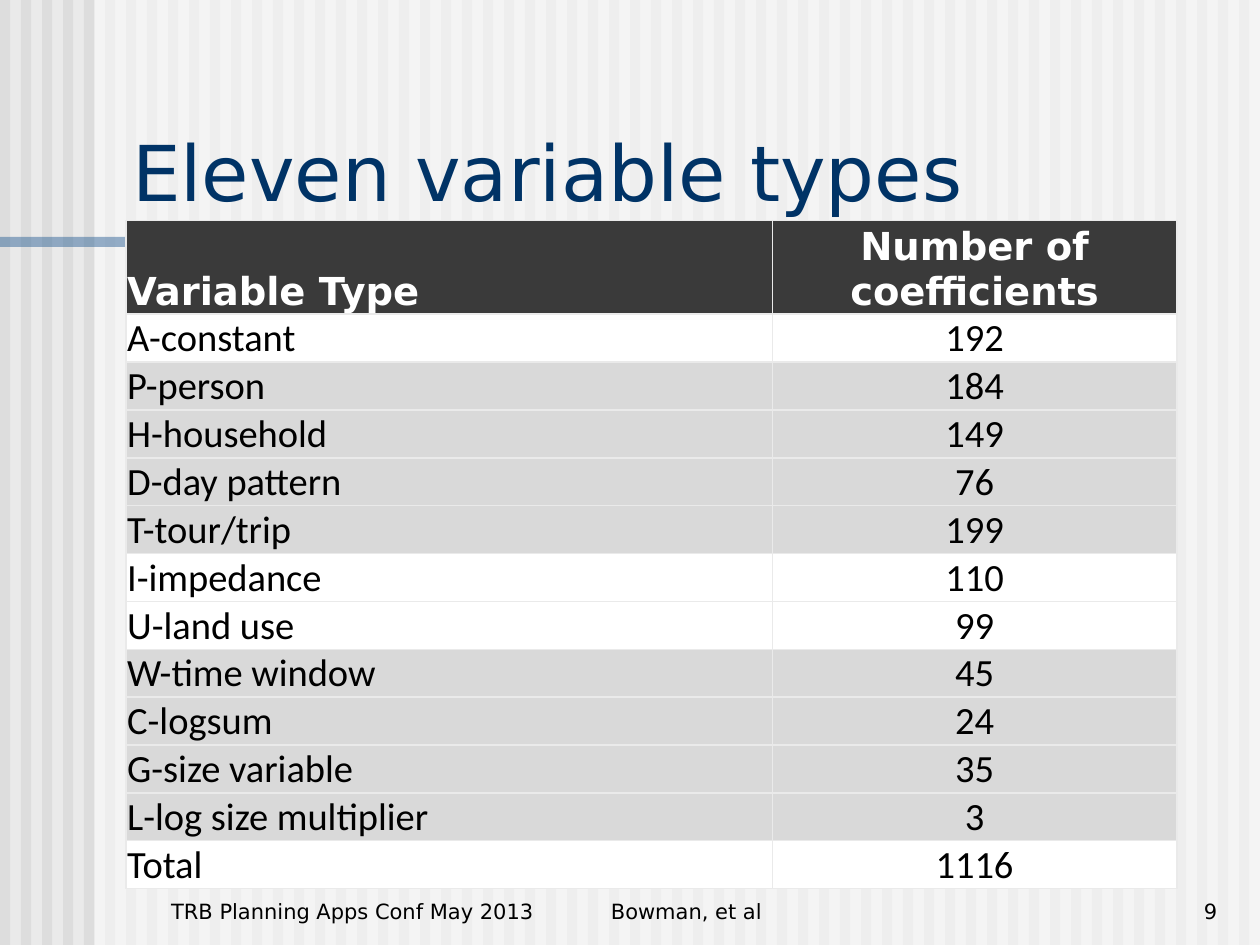
from lxml.etree import SubElement as Sub
from pptx import Presentation
from pptx.dml.color import RGBColor
from pptx.enum.shapes import MSO_SHAPE as Shape
from pptx.enum.text import MSO_ANCHOR as Anchor, PP_ALIGN as Align
from pptx.oxml.ns import qn
from pptx.util import Inches, Pt

SANS = "DejaVu Sans"
ROWS = [
    ("A-constant", 192, "FFFFFF"),
    ("P-person", 184, "D9D9D9"),
    ("H-household", 149, "D9D9D9"),
    ("D-day pattern", 76, "D9D9D9"),
    ("T-tour/trip", 199, "D9D9D9"),
    ("I-impedance", 110, "FFFFFF"),
    ("U-land use", 99, "FFFFFF"),
    ("W-time window", 45, "D9D9D9"),
    ("C-logsum", 24, "D9D9D9"),
    ("G-size variable", 35, "D9D9D9"),
    ("L-log size multiplier", 3, "D9D9D9"),
    ("Total", 1116, "FFFFFF"),
]


def paint(fill, color):
    fill.solid()
    fill.fore_color.rgb = RGBColor.from_string(color)


def style(para, size, color, face=SANS, bold=False, align=Align.LEFT):
    para.alignment = align
    font = para.font
    font.size, font.name, font.bold = Pt(size), face, bold
    paint(font.fill, color)


def add_bar(slide, box, color, alpha=None):
    bar = slide.shapes.add_shape(Shape.RECTANGLE, *map(Inches, box))
    bar.shadow.inherit = False
    bar.line.fill.background()
    paint(bar.fill, color)
    if alpha:
        tint = bar.fill._xPr.find(qn("a:solidFill"))[0]
        Sub(tint, qn("a:alpha"), val=str(alpha * 1000))


def add_text(slide, box, text, size, color, align=Align.LEFT):
    frame = slide.shapes.add_textbox(*map(Inches, box)).text_frame
    frame.word_wrap = True
    frame.vertical_anchor = Anchor.BOTTOM
    frame.text = text
    style(frame.paragraphs[0], size, color, align=align)


def add_back(slide, box):
    left, top, width, height = box
    paint(slide.background.fill, "EAEAEA")
    for i in range(60):
        add_bar(slide, (left + i / 6, top, 0.08, height), "DDDDDD")
    add_bar(slide, (left + 0.75, top, width - 0.75, height), "FFFFFF", 50)
    add_bar(slide, (left, top + 1.88, 7.6, 0.08), "336699", 50)


def add_edges(cell, color):
    props = cell._tc.get_or_add_tcPr()
    for i, side in enumerate(("lnL", "lnR", "lnT", "lnB")):
        line = props.makeelement(qn(f"a:{side}"), w=str(Pt(1)))
        props.insert(i, line)
        Sub(Sub(line, qn("a:solidFill")), qn("a:srgbClr"), val=color)


def set_cell(cell, text, fill, color, face, bold, align):
    cell.text = str(text)
    cell.vertical_anchor = Anchor.BOTTOM
    cell.margin_left = cell.margin_right = cell.margin_top = Inches(0.01)
    cell.margin_bottom = 0
    style(cell.text_frame.paragraphs[0], 22, color, face, bold, align)
    paint(cell.fill, fill)
    add_edges(cell, "EAEAEA")


def add_grid(slide, box):
    data = [("Variable Type", "Number of coefficients", "3A3A3A")] + ROWS
    grid = slide.shapes.add_table(len(data), 2, *map(Inches, box)).table
    for col, width in zip(grid.columns, (5.13, 3.21)):
        col.width = Inches(width)
    for i, (*texts, fill) in enumerate(data):
        grid.rows[i].height = Inches(0.38 if i else 0.74)
        look = ("000000", "Calibri", False) if i else ("FFFFFF", SANS, True)
        for j, align in enumerate((Align.LEFT, Align.CENTER)):
            set_cell(grid.cell(i, j), texts[j], fill, *look, align)


def add_foot(slide, box):
    left, top, _, height = box
    parts = [
        ("TRB Planning Apps Conf May 2013", 3.49, Align.LEFT),
        ("Bowman, et al", 4.08, Align.LEFT),
        ("9", 0.93, Align.RIGHT),
    ]
    for text, width, align in parts:
        add_text(slide, (left, top, width, height), text, 12, "000000", align)
        left += width


def main():
    deck = Presentation()
    deck.slide_width, deck.slide_height = Inches(10), Inches(7.5)
    slide = deck.slides.add_slide(deck.slide_layouts[6])
    add_back(slide, (0, 0, 10, 7.5))
    add_text(slide, (0.95, 0.93, 8.93, 0.84), "Eleven variable types", 44, "003366")
    add_foot(slide, (1.26, 6.88, 8.5, 0.5))
    add_grid(slide, (1, 1.75, 8.34, 5.3))
    deck.save("out.pptx")


if __name__ == "__main__":
    main()
